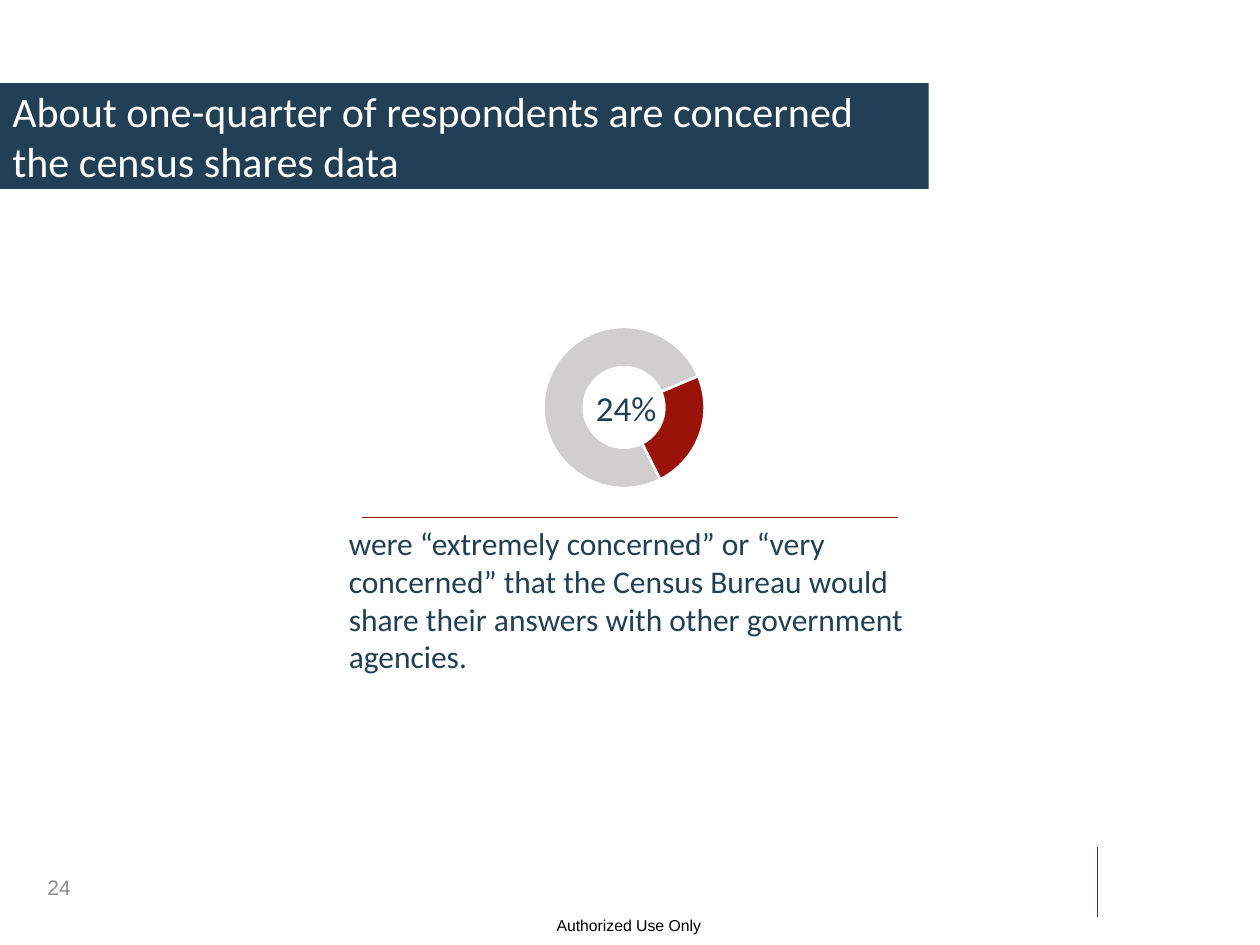
import pptx
import pptx.chart.data
import pptx.dml.color
import pptx.enum.chart
import pptx.enum.shapes
import pptx.enum.text
import pptx.oxml
import pptx.oxml.ns
import pptx.util
from pptx.util import Inches

NAVY, RED, GREY, WHITE = "214056", "9A1208", "D0CECE", "FFFFFF"
ALIGN = pptx.enum.text.PP_ALIGN
ANCHOR = pptx.enum.text.MSO_ANCHOR


def color(hex_string):
    return pptx.dml.color.RGBColor.from_string(hex_string)


def add_text(text, left, top, width, height, size, hex_string,
             font="Calibri", align=ALIGN.LEFT, anchor=ANCHOR.TOP):
    box = slide.shapes.add_textbox(Inches(left), Inches(top), Inches(width), Inches(height))
    frame = box.text_frame
    frame.word_wrap = True
    frame.vertical_anchor = anchor
    frame.text = text
    frame.paragraphs[0].alignment = align
    run = frame.paragraphs[0].runs[0]
    run.font.name = font
    run.font.size = pptx.util.Pt(size)
    run.font.color.rgb = color(hex_string)


presentation = pptx.Presentation()
presentation.slide_width = Inches(10)
presentation.slide_height = Inches(7.5)
slide = presentation.slides.add_slide(presentation.slide_layouts[6])

# Title band
band = slide.shapes.add_shape(pptx.enum.shapes.MSO_SHAPE.RECTANGLE,
                              Inches(0), Inches(0.66), Inches(7.37), Inches(0.84))
band.shadow.inherit = False
band.fill.solid()
band.fill.fore_color.rgb = color(NAVY)
band.line.fill.background()
add_text("About one-quarter of respondents are concerned the census shares data",
         0, 0.78, 7.07, 0.59, 24, WHITE, anchor=ANCHOR.MIDDLE)

# Footer rule and the rule under the doughnut
for x1, y1, x2, y2, hex_string in [(8.71, 6.72, 8.71, 7.28, NAVY),
                                   (2.87, 4.11, 7.13, 4.11, RED)]:
    rule = slide.shapes.add_connector(pptx.enum.shapes.MSO_CONNECTOR.STRAIGHT,
                                      Inches(x1), Inches(y1), Inches(x2), Inches(y2))
    rule.line.color.rgb = color(hex_string)
    rule.line.width = pptx.util.Pt(0.5)
    rule._element.spPr.append(pptx.oxml.parse_xml(
        f"<a:effectLst {pptx.oxml.ns.nsdecls('a')}/>"))

# Footer texts
add_text("24", 0.23, 6.84, 0.43, 0.4, 12, "8C8C8C", "Arial", ALIGN.RIGHT, ANCHOR.MIDDLE)
add_text("Authorized Use Only", 0.13, 7.22, 9.72, 0.25, 9, "000000", "Arial", ALIGN.CENTER)

# Doughnut of concerned respondents
shares = pptx.chart.data.CategoryChartData()
shares.categories = ["1", "2"]
shares.add_series("Series 1", (24, 76))
doughnut = slide.shapes.add_chart(pptx.enum.chart.XL_CHART_TYPE.DOUGHNUT,
                                  Inches(4.22), Inches(2.48), Inches(1.56), Inches(1.48),
                                  shares).chart
doughnut.has_legend = False
doughnut.has_title = False
doughnut.font.name = "Calibri"
doughnut.font.size = pptx.util.Pt(10)
doughnut.font.color.rgb = color("000000")
plot = doughnut.plots[0]
plot.vary_by_categories = True
for index, hex_string in enumerate([RED, GREY]):
    slice_format = plot.series[0].points[index].format
    slice_format.fill.solid()
    slice_format.fill.fore_color.rgb = color(hex_string)
    slice_format.line.color.rgb = color(WHITE)
    slice_format.line.width = pptx.util.Pt(1.5)

# Ring rotation, hole size and plot area placement
ring = plot._element
for tag, value in [("c:firstSliceAng", 67), ("c:holeSize", 75)]:
    setting = ring.find(pptx.oxml.ns.qn(tag))
    if setting is None:
        setting = pptx.oxml.parse_xml(f"<{tag} {pptx.oxml.ns.nsdecls('c')}/>")
        ring.append(setting)
    setting.set("val", str(value))
plot_area = ring.getparent()
old_layout = plot_area.find(pptx.oxml.ns.qn("c:layout"))
if old_layout is not None:
    plot_area.remove(old_layout)
placement = "".join(f'<c:{tag} val="{value}"/>' for tag, value in [
    ("layoutTarget", "inner"), ("xMode", "edge"), ("yMode", "edge"),
    ("x", 0.06), ("y", 0.02), ("w", 0.82), ("h", 0.98)])
plot_area.insert(0, pptx.oxml.parse_xml(
    f"<c:layout {pptx.oxml.ns.nsdecls('c')}><c:manualLayout>{placement}"
    "</c:manualLayout></c:layout>"))

# Share in the ring and the finding below
add_text("24%", 4.62, 3.02, 0.7, 0.44, 20, NAVY, align=ALIGN.CENTER)
add_text("were “extremely concerned” or “very concerned” that the Census Bureau would "
         "share their answers with other government agencies.",
         2.67, 4.11, 4.66, 1.31, 18, NAVY)

presentation.save("out.pptx")
